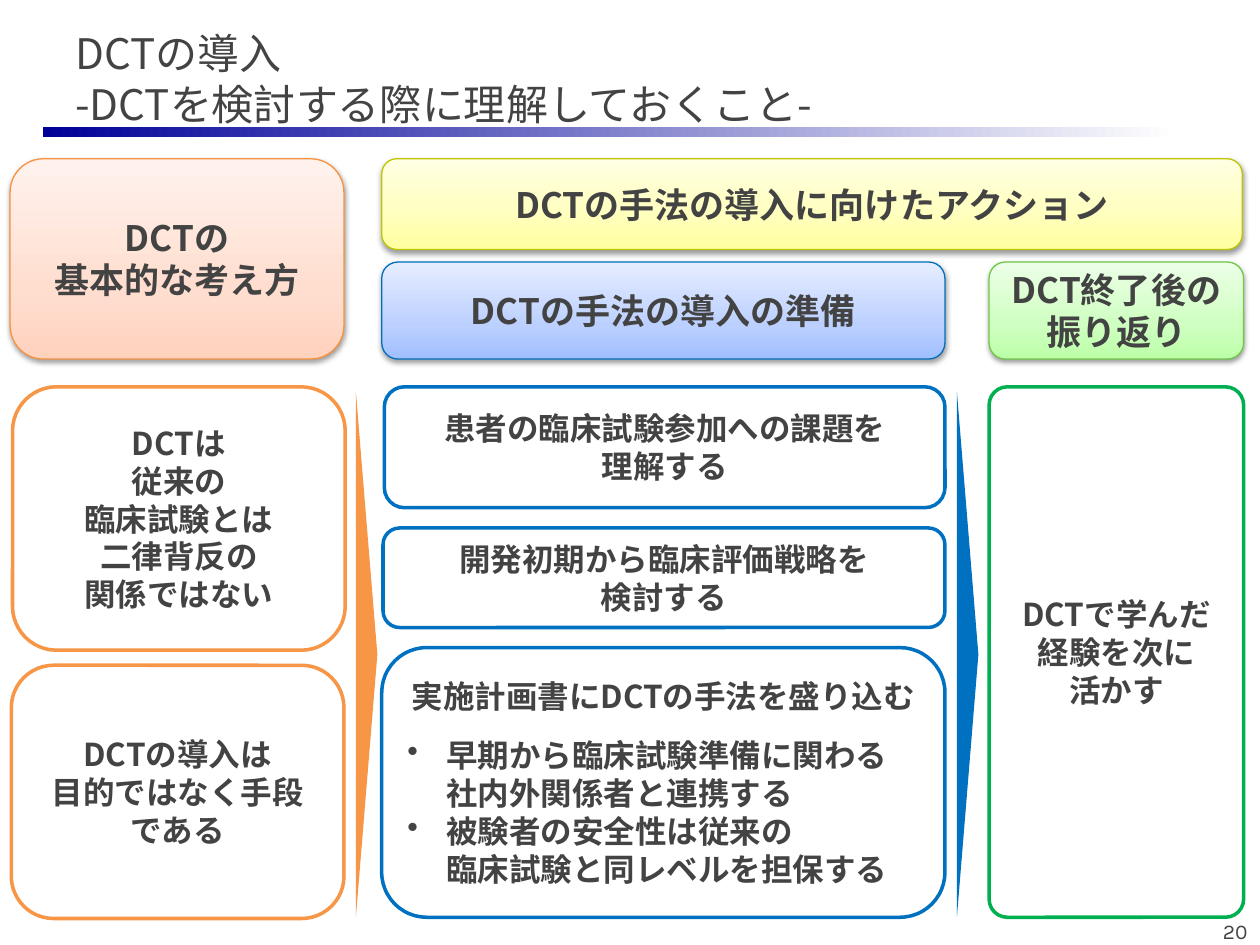
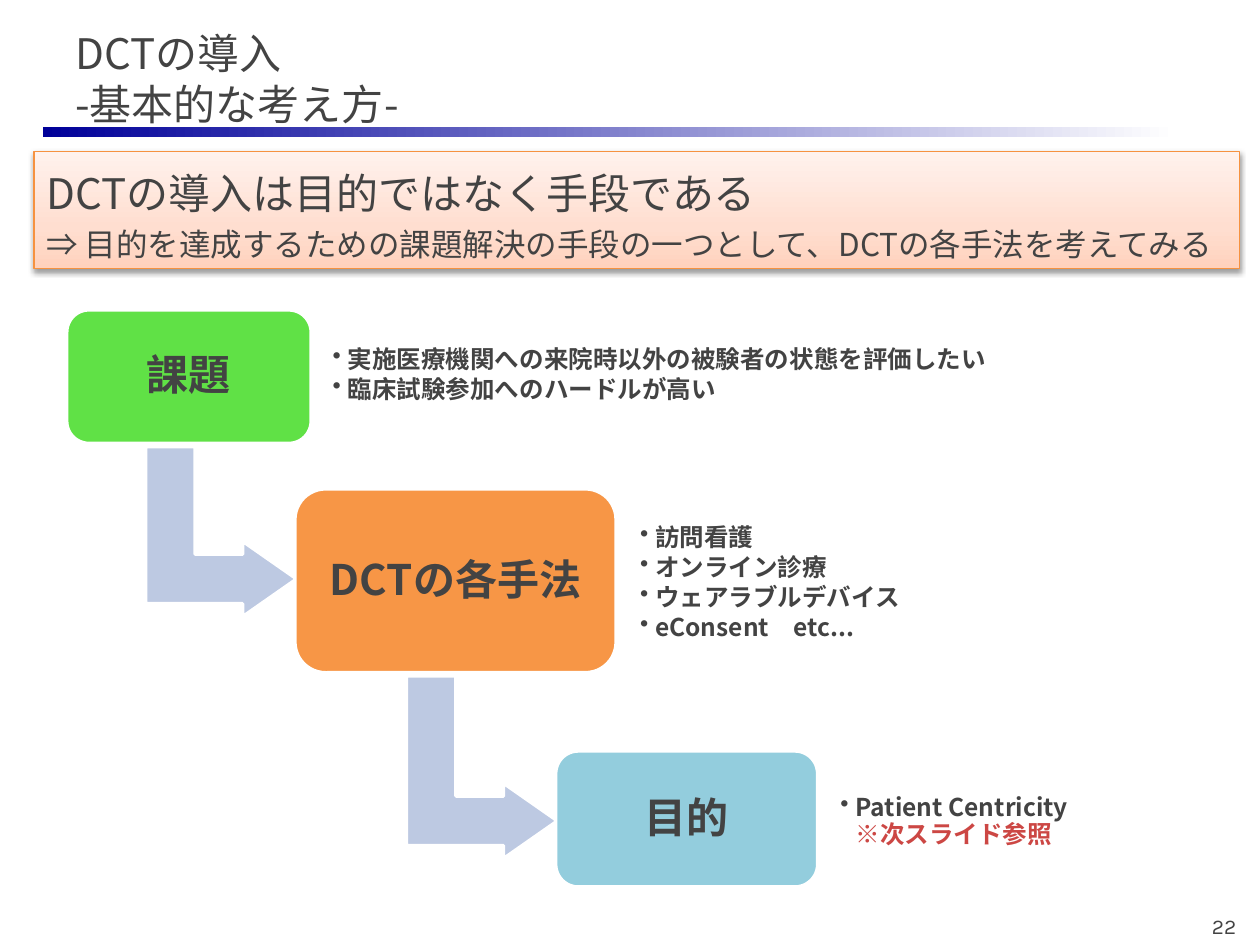
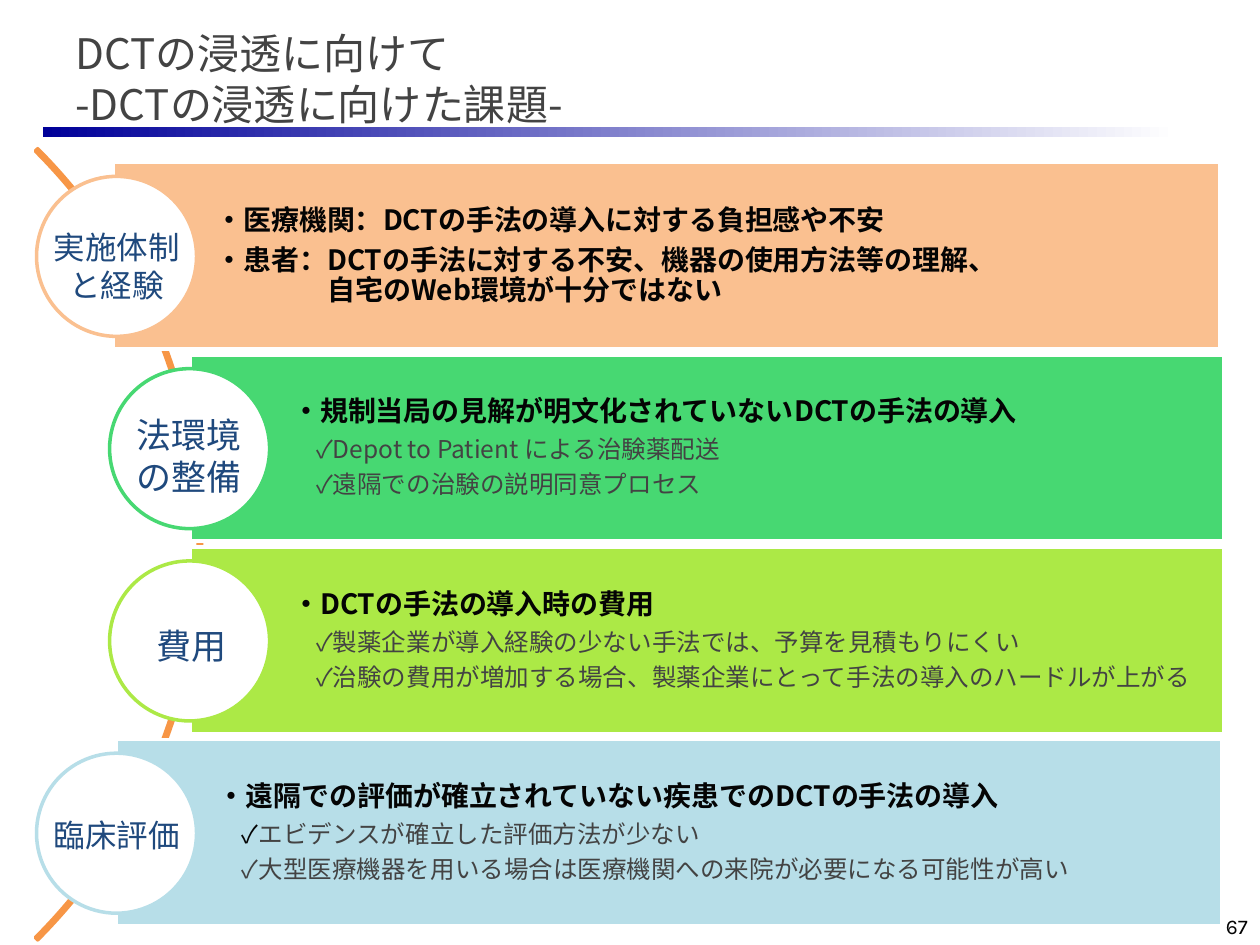
from lxml.etree import SubElement
from pptx import Presentation
from pptx.dml.color import RGBColor
from pptx.enum.shapes import MSO_SHAPE
from pptx.enum.text import MSO_ANCHOR, PP_ALIGN
from pptx.oxml.ns import qn
from pptx.util import Inches, Pt

RECT, ROUND = MSO_SHAPE.RECTANGLE, MSO_SHAPE.ROUNDED_RECTANGLE
OVAL, WEDGE = MSO_SHAPE.OVAL, MSO_SHAPE.ISOSCELES_TRIANGLE
BEND, ARC = MSO_SHAPE.BENT_UP_ARROW, MSO_SHAPE.BLOCK_ARC
TOP, MID, LOW = MSO_ANCHOR.TOP, MSO_ANCHOR.MIDDLE, MSO_ANCHOR.BOTTOM
LEFT, MIDST, RIGHT = PP_ALIGN.LEFT, PP_ALIGN.CENTER, PP_ALIGN.RIGHT

COLS, ROWS = 100, 75
WIDE, HIGH = Inches(10), Inches(7.5)
SANS, DIGIT = "Noto Sans CJK JP", "Karla"
PITCH = 1.2  # line height as a share of the text size

HUES = {
    "text": "434343", "ink": "040404", "navy": "1F497D", "red": "CC4744",
    "white": "FFFFFF", "deep": "000099", "black": "000000",
    "orange": "F79646", "blue": "0070C0", "green": "00B050",
    "lime": "60E146", "aqua": "93CDDD", "mist": "BDC9E2",
    "peach": "FAC090", "mint": "47D872", "leaf": "ACE946", "ice": "B7DEE8",
    "rust": "F69240", "gold": "BFC404", "grass": "71C747", "sea": "006EBC",
}
# Gradient stops, from the bottom of the shape to its top
FADES = {
    "rust": [(0, "FFD2BD"), (35, "FFDED0"), (100, "FFF2ED")],
    "gold": [(0, "FFFFA0"), (50, "FFFFC5"), (100, "FFFFE3")],
    "grass": [(0, "BCFFA8"), (35, "CFFFC1"), (100, "ECFFE7")],
    "sea": [(0, "A0BEFF"), (35, "BCD0FF"), (100, "E5EDFF")],
}


def rgb(hue):
    return RGBColor.from_string(HUES[hue])


class Deck:
    def __init__(self):
        self.prs = Presentation()
        self.prs.slide_width, self.prs.slide_height = WIDE, HIGH
        self.page = None

    def grid(self, box):
        """Turn columns and rows into lengths."""
        x, y, w, h = box
        return (int(x * WIDE / COLS), int(y * HIGH / ROWS),
                int(w * WIDE / COLS), int(h * HIGH / ROWS))

    def start(self, title):
        self.page = self.prs.slides.add_slide(self.prs.slide_layouts[6])
        bar = self.shape(RECT, (3.4, 10.1, 90, 0.8))
        self.fade(bar, [(0, HUES["deep"]), (100, HUES["white"])], 0)
        self.label((5, 1.7, 85.2, 9), title, 24, anchor=LOW)

    def number(self, num, x, y, hue="text"):
        self.label((x, y, 20.8, 3.3), [num], 12, hue=hue, align=RIGHT,
                   anchor=LOW, face=DIGIT)

    def shape(self, kind, box, fill=None, line=None, width=2, turn=0, adj=()):
        item = self.page.shapes.add_shape(kind, *self.grid(box))
        item.shadow.inherit = False
        item.rotation = turn
        for i, part in enumerate(adj):
            item.adjustments[i] = part
        if fill:
            item.fill.solid()
            item.fill.fore_color.rgb = rgb(fill)
        if line:
            item.line.color.rgb = rgb(line)
            item.line.width = Pt(width)
        else:
            item.line.fill.background()
        return item

    def fade(self, item, stops, angle):
        item.fill.gradient()
        prop = item.element.spPr
        row = prop.find(".//" + qn("a:gsLst"))
        for old in list(row):
            row.remove(old)
        for pos, code in stops:
            stop = SubElement(row, qn("a:gs"), pos=str(pos * 1000))
            SubElement(stop, qn("a:srgbClr"), val=code)
        prop.find(".//" + qn("a:lin")).set("ang", str(angle * 60000))

    def glow(self, kind, box, tone):
        """A shape with a soft gradient and a drop shadow."""
        item = self.shape(kind, box, line=tone, width=0.75)
        self.fade(item, FADES[tone], 270)
        cast = SubElement(
            item.element.spPr.find(qn("a:effectLst")), qn("a:outerShdw"),
            blurRad=str(Pt(3.1)), dist=str(Pt(1.6)), dir="5400000", rotWithShape="0")
        hue = SubElement(cast, qn("a:srgbClr"), val=HUES["black"])
        SubElement(hue, qn("a:alpha"), val="38000")
        return item

    def label(self, box, lines, size, wrap=True, **style):
        item = self.page.shapes.add_textbox(*self.grid(box))
        self.text(item, lines, size, **style)
        item.text_frame.word_wrap = wrap

    def text(self, item, lines, size, anchor=TOP, pad=None, **style):
        """Each line is a string, or a string with its own style."""
        frame = item.text_frame
        frame.word_wrap = True
        frame.vertical_anchor = anchor
        if pad:
            (frame.margin_left, frame.margin_top,
             frame.margin_right, frame.margin_bottom) = map(Inches, pad)
        for i, line in enumerate(lines):
            words, own = (line, {}) if isinstance(line, str) else line
            para = frame.add_paragraph() if i else frame.paragraphs[0]
            self.para(para, words, **{"size": size, **style, **own})

    def para(self, para, words, size, hue="text", bold=False, align=LEFT, face=SANS,
             lead=1, after=0, before=0, left=0, first=0, dot=False, mark=None):
        if mark:
            head, tail = para.add_run(), para.add_run()
            head.text, tail.text = words[0], words[1:]
            head.font.color.rgb = rgb(mark)
        else:
            para.text = words
        para.alignment = align
        para.line_spacing = Pt(round(size * PITCH * lead, 1))
        para.space_after = Pt(round(size * after, 1))
        para.space_before = Pt(before)
        font = para.font
        font.size, font.bold, font.name = Pt(size), bold, face
        font.color.rgb = rgb(hue)
        prop = para._p.get_or_add_pPr()
        base = prop.find(qn("a:defRPr"))
        SubElement(base, qn("a:ea"), typeface=face)
        prop.set("marL", str(Inches(left)))
        prop.set("indent", str(Inches(first)))
        if dot:
            bullet = SubElement(prop, qn("a:buChar"), char="•")
            base.addprevious(bullet)


def plan(deck):
    deck.start(["DCTの導入", "-DCTを検討する際に理解しておくこと-"])

    # Column heads
    heads = [
        ((0.8, 12.6, 26.5, 15.9), "rust", ["DCTの", "基本的な考え方"]),
        ((30.3, 12.6, 68.3, 7.2), "gold", ["DCTの手法の導入に向けたアクション"]),
        ((30.3, 20.8, 44.7, 7.7), "sea", ["DCTの手法の導入の準備"]),
        ((78.5, 20.8, 20.2, 7.7), "grass", ["DCT終了後の振り返り"]),
    ]
    for box, tone, lines in heads:
        deck.text(deck.glow(ROUND, box, tone), lines, 20, anchor=MID,
                  align=MIDST, bold=True)

    # Cards below the heads
    item = {"align": LEFT, "left": 0.31, "first": -0.31, "dot": True}
    cards = [
        ((1, 30.7, 26.4, 20.9), "orange", 0.167,
         ["DCTは", "従来の", "臨床試験とは", "二律背反の", "関係ではない"]),
        ((0.9, 52.8, 26.4, 20.1), "orange", 0.167,
         ["DCTの導入は", "目的ではなく手段である"]),
        ((30.5, 30.7, 44.5, 9.6), "blue", 0.167,
         ["患者の臨床試験参加への課題を", "理解する"]),
        ((30.4, 41.9, 44.6, 7.9), "blue", 0.167,
         ["開発初期から臨床評価戦略を", "検討する"]),
        ((30.3, 51.4, 44.7, 21.4), "blue", 0.167,
         ["実施計画書にDCTの手法を盛り込む",
          ("早期から臨床試験準備に関わる\n社内外関係者と連携する", {**item, "before": 12}),
          ("被験者の安全性は従来の\n臨床試験と同レベルを担保する", item)]),
        ((78.5, 30.7, 20.2, 42.1), "green", 0.071,
         ["DCTで学んだ経験を次に", "活かす"]),
    ]
    for box, hue, bend, lines in cards:
        card = deck.shape(ROUND, box, "white", hue, adj=[bend])
        deck.text(card, lines, 18, anchor=MID, align=MIDST, bold=True)

    # Wedges between the columns
    for x, hue in ((8.3, "orange"), (56, "blue")):
        deck.shape(WEDGE, (x, 51.1, 41.6, 1.7), hue, turn=90)
    deck.number("20", 79.2, 72.1)


def steps(deck):
    deck.start(["DCTの導入", "-基本的な考え方-"])

    # Key message
    deck.text(deck.glow(RECT, (2.7, 12, 95.7, 9.3), "rust"), [
        "DCTの導入は目的ではなく手段である",
        ("⇒ 目的を達成するための課題解決の手段の一つとして、DCTの各手法を考えてみる",
         {"size": 18}),
    ], 24, lead=1.2)

    # Arrows down the stairs
    for box in ((10.8, 36.2, 13.5, 12), (31, 54.9, 14.5, 12)):
        deck.shape(BEND, box, "mist", "white", turn=90, adj=[0.328, 0.25, 0.358])

    # Steps with their notes
    stairs = [
        ((5.3, 24.6, 19.4, 10.6), "lime", "課題", (25.8, 24.8, 56, 10),
         ["実施医療機関への来院時以外の被験者の状態を評価したい",
          "臨床試験参加へのハードルが高い"]),
        ((23.4, 38.8, 25.5, 14.6), "orange", "DCTの各手法", (50.2, 38.6, 38.3, 15.4),
         ["訪問看護", "オンライン診療", "ウェアラブルデバイス", "eConsent　etc..."]),
        ((44.1, 59.6, 20.8, 10.8), "aqua", "目的", (66.1, 60.2, 29.1, 10),
         [("Patient Centricity", {"after": 0}),
          ("※次スライド参照", {"dot": False, "first": 0, "hue": "red"})]),
    ]
    for box, hue, name, side, notes in stairs:
        step = deck.shape(ROUND, box, hue, "white")
        deck.text(step, [name], 24, anchor=MID, pad=[0.1] * 4, align=MIDST,
                  bold=True, lead=0.9, after=0.35)
        deck.label(side, notes, 14, anchor=MID, pad=[0.06] * 4, bold=True,
                   lead=0.9, after=0.15, left=0.12, first=-0.12, dot=True)
    deck.number("22", 78.3, 71.7)


def issues(deck):
    deck.start(["DCTの浸透に向けて", "-DCTの浸透に向けた課題-"])
    deck.shape(ARC, (-72.8, -1.2, 88.8, 88.8), line="orange", adj=[189, 27, 0.003])

    # Bands, each with a circle on its left end
    sub = {"size": 14, "bold": False, "hue": "text", "left": 0.19}
    bands = [
        (9, 96.8, 2.9, "peach",
         ["・医療機関：DCTの手法の導入に対する負担感や不安",
          ("・患者：DCTの手法に対する不安、機器の使用方法等の理解、\n"
           "自宅のWeb環境が十分ではない", {"left": 0.89, "first": -0.89})]),
        (15.1, 97.1, 8.7, "mint",
         ["・規制当局の見解が明文化されていないDCTの手法の導入",
          ("✓Depot to Patient による治験薬配送", sub),
          ("✓遠隔での治験の説明同意プロセス", sub)]),
        (15.1, 97.1, 8.7, "leaf",
         ["・DCTの手法の導入時の費用",
          ("✓製薬企業が導入経験の少ない手法では、予算を見積もりにくい", sub),
          ("✓治験の費用が増加する場合、製薬企業にとって手法の導入のハードルが上がる", sub)]),
        (9.2, 97, 2.9, "ice",
         ["・遠隔での評価が確立されていない疾患でのDCTの手法の導入",
          ("✓エビデンスが確立した評価方法が少ない", {**sub, "mark": "ink"}),
          ("✓大型医療機器を用いる場合は医療機関への来院が必要になる可能性が高い", sub)]),
    ]
    for i, (x, end, ring, hue, lines) in enumerate(bands):
        y = 12.9 + 15.26 * i
        band = deck.shape(RECT, (x, y, end - x, 14.8), hue, "white")
        deck.text(band, lines, 16, anchor=MID, pad=[0.81, 0.04, 0.04, 0.04],
                  hue="ink", bold=True, lead=0.9, after=0.35)
        deck.shape(OVAL, (ring, y + 1.1, 12.7, 12.7), "white", hue)

    # Names in the circles
    names = [
        ((3.2, 17.6, 12.1, 7.1), 18, ["実施体制と経験"], True),
        ((9.8, 32.3, 10.4, 7.7), 20, ["法環境", "の整備"], False),
        ((11.4, 49.1, 7.6, 4.4), 20, ["費用"], False),
        ((3.2, 64.3, 12.1, 4), 18, ["臨床評価"], False),
    ]
    for box, size, lines, wrap in names:
        deck.label(box, lines, size, wrap=wrap, hue="navy", align=MIDST)
    deck.number("67", 79.2, 71.7, "ink")


def main():
    deck = Deck()
    for draw in (plan, steps, issues):
        draw(deck)
    deck.prs.save("out.pptx")


if __name__ == "__main__":
    main()
